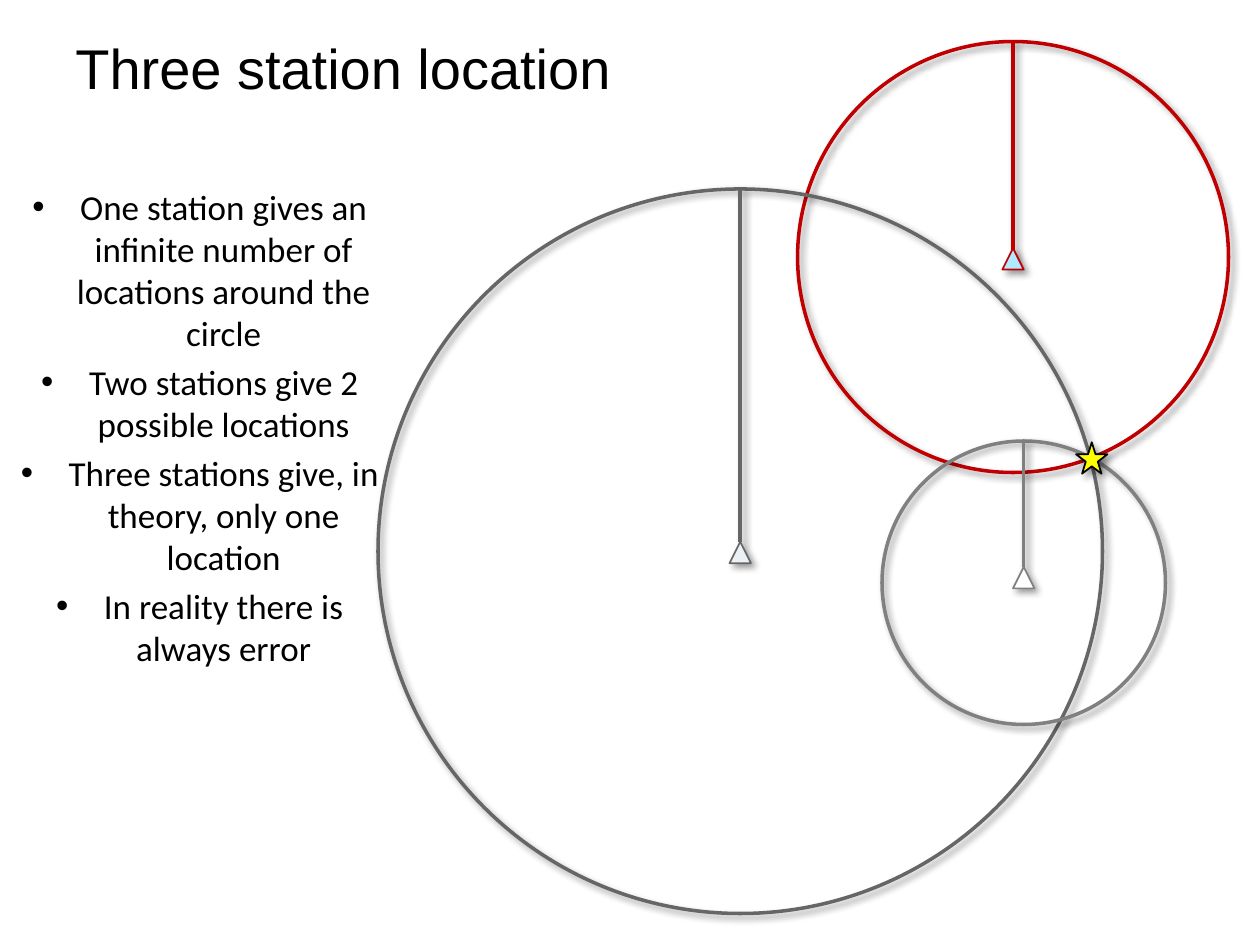
from dataclasses import dataclass

from lxml import etree
from pptx import Presentation
from pptx import util as u
from pptx.dml.color import RGBColor
from pptx.enum import shapes, text
from pptx.oxml.ns import qn


@dataclass(frozen=True)
class Theme:
    ink: str = "000000"
    red: str = "C00000"
    dark_gray: str = "666666"
    gray: str = "808080"
    sky: str = "B0EAFF"
    mist: str = "EBF1F4"
    white: str = "FFFFFF"
    yellow: str = "FFFF00"
    title_font: str = "Arial"
    body_font: str = "Calibri"
    title_size: int = 32
    body_size: int = 20
    ring_width: int = 2
    marker_width: int = 1


THEME = Theme()
MARKER = 0.17
POINTS = (
    "One station gives an infinite number of locations around the circle",
    "Two stations give 2 possible locations",
    "Three stations give, in theory, only one location",
    "In reality there is always error",
)


def inches(values):
    return [u.Inches(v) for v in values]


def add_shadow(sp):
    props = sp._element.spPr
    effects = etree.SubElement(props, qn("a:effectLst"))
    shadow = etree.SubElement(
        effects, qn("a:outerShdw"), blurRad=str(u.Pt(4)), dist=str(u.Pt(3)),
        dir=str(45 * 60000), algn="tl", rotWithShape="0")
    color = etree.SubElement(shadow, qn("a:srgbClr"), val=THEME.ink)
    etree.SubElement(color, qn("a:alpha"), val="40000")


def style_line(sp, color, width):
    sp.line.color.rgb = RGBColor.from_string(color)
    sp.line.width = u.Pt(width)


def add_outlined(s, kind, box, line, width, fill=None):
    sp = s.shapes.add_shape(kind, *inches(box))
    if fill:
        sp.fill.solid()
        sp.fill.fore_color.rgb = RGBColor.from_string(fill)
    else:
        sp.fill.background()
    style_line(sp, line, width)
    add_shadow(sp)


def add_text(s, box):
    tf = s.shapes.add_textbox(*inches(box)).text_frame
    tf.word_wrap = True
    tf.vertical_anchor = text.MSO_ANCHOR.TOP
    return tf


def style_runs(p, font, size):
    for r in p.runs:
        r.font.name = font
        r.font.size = u.Pt(size)
        r.font.color.rgb = RGBColor.from_string(THEME.ink)


def add_title(s, box):
    tf = add_text(s, box)
    tf.text = "Three station location"
    style_runs(tf.paragraphs[0], THEME.title_font, THEME.title_size)


def add_points(s, box):
    tf = add_text(s, box)
    tf.text = "\n".join(POINTS)
    for i, p in enumerate(tf.paragraphs):
        props = p._p.get_or_add_pPr()
        props.set("marL", str(u.Inches(0.38)))
        props.set("indent", str(u.Inches(-0.38)))
        etree.SubElement(props, qn("a:buFont"), typeface=THEME.title_font)
        etree.SubElement(props, qn("a:buChar"), char="•")
        p.alignment = text.PP_ALIGN.CENTER
        p.space_before = u.Pt(4 if i else 0)
        style_runs(p, THEME.body_font, THEME.body_size)


def add_station(s, box, marker_top, radius_start, color, fill):
    left, top, width, _ = box
    center = left + width / 2
    add_outlined(s, shapes.MSO_SHAPE.OVAL, box, color, THEME.ring_width)
    radius = s.shapes.add_connector(
        shapes.MSO_CONNECTOR.STRAIGHT,
        *inches((center, radius_start, center, top)))
    style_line(radius, color, THEME.ring_width)
    add_shadow(radius)
    marker = (center - MARKER / 2, marker_top, MARKER, MARKER)
    add_outlined(s, shapes.MSO_SHAPE.ISOSCELES_TRIANGLE, marker, color,
                 THEME.marker_width, fill)


def add_epicenter(s, box):
    add_outlined(s, shapes.MSO_SHAPE.STAR_5_POINT, box, THEME.ink,
                 THEME.marker_width, THEME.yellow)


def main():
    prs = Presentation()
    prs.slide_width, prs.slide_height = inches((10, 7.5))
    s = prs.slides.add_slide(prs.slide_layouts[6])
    add_title(s, (0.5, 0.22, 9, 1.25))
    add_points(s, (0, 1.42, 3.17, 4.92))
    add_station(s, (6.33, 0.33, 3.42, 3.42), 1.97, 2.07, THEME.red, THEME.sky)
    add_station(s, (3, 1.5, 5.75, 5.75), 4.3, 4.3, THEME.dark_gray, THEME.mist)
    add_station(s, (7, 3.5, 2.25, 2.25), 4.5, 4.5, THEME.gray, THEME.white)
    add_epicenter(s, (8.54, 3.51, 0.25, 0.25))
    prs.save("out.pptx")


if __name__ == "__main__":
    main()
